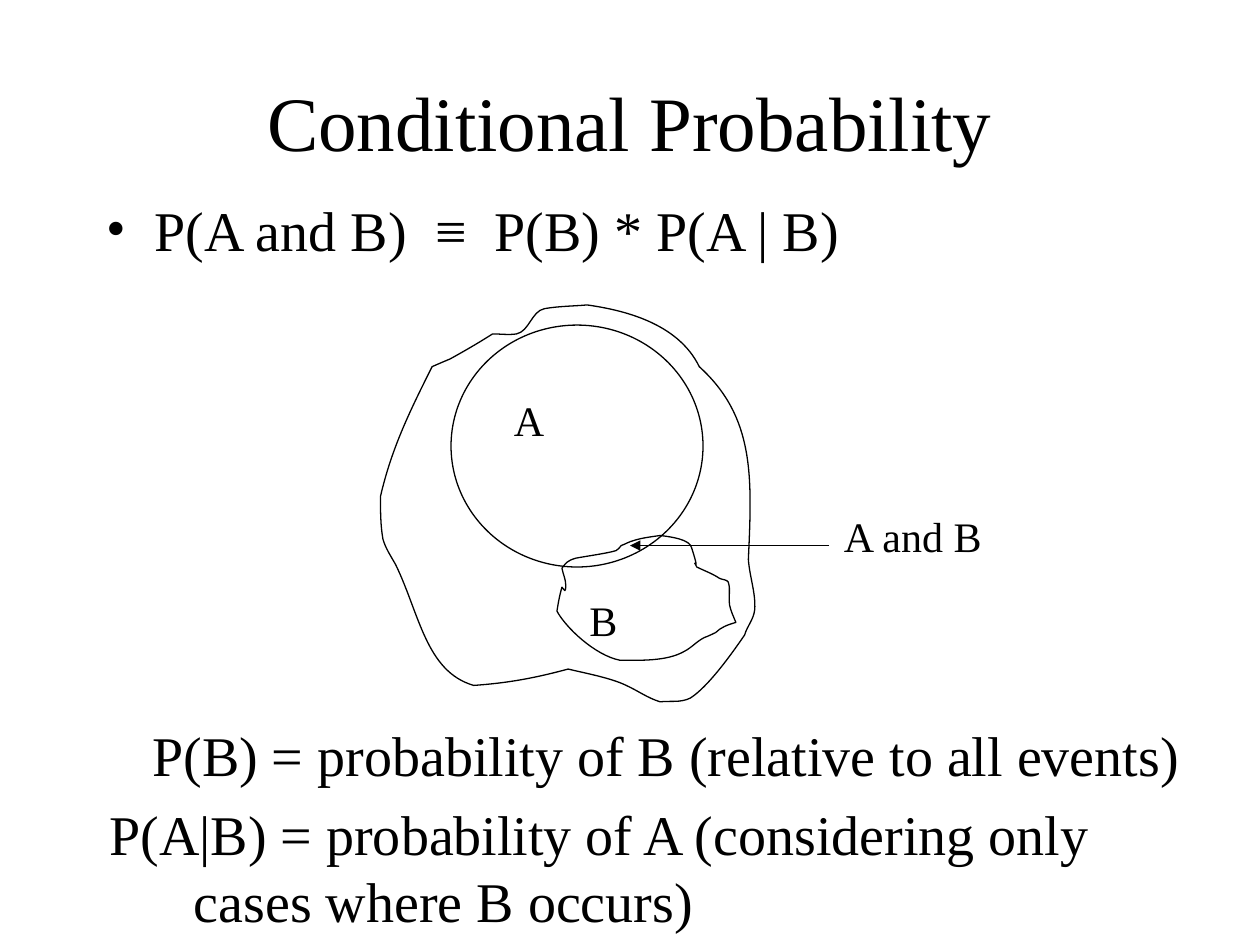
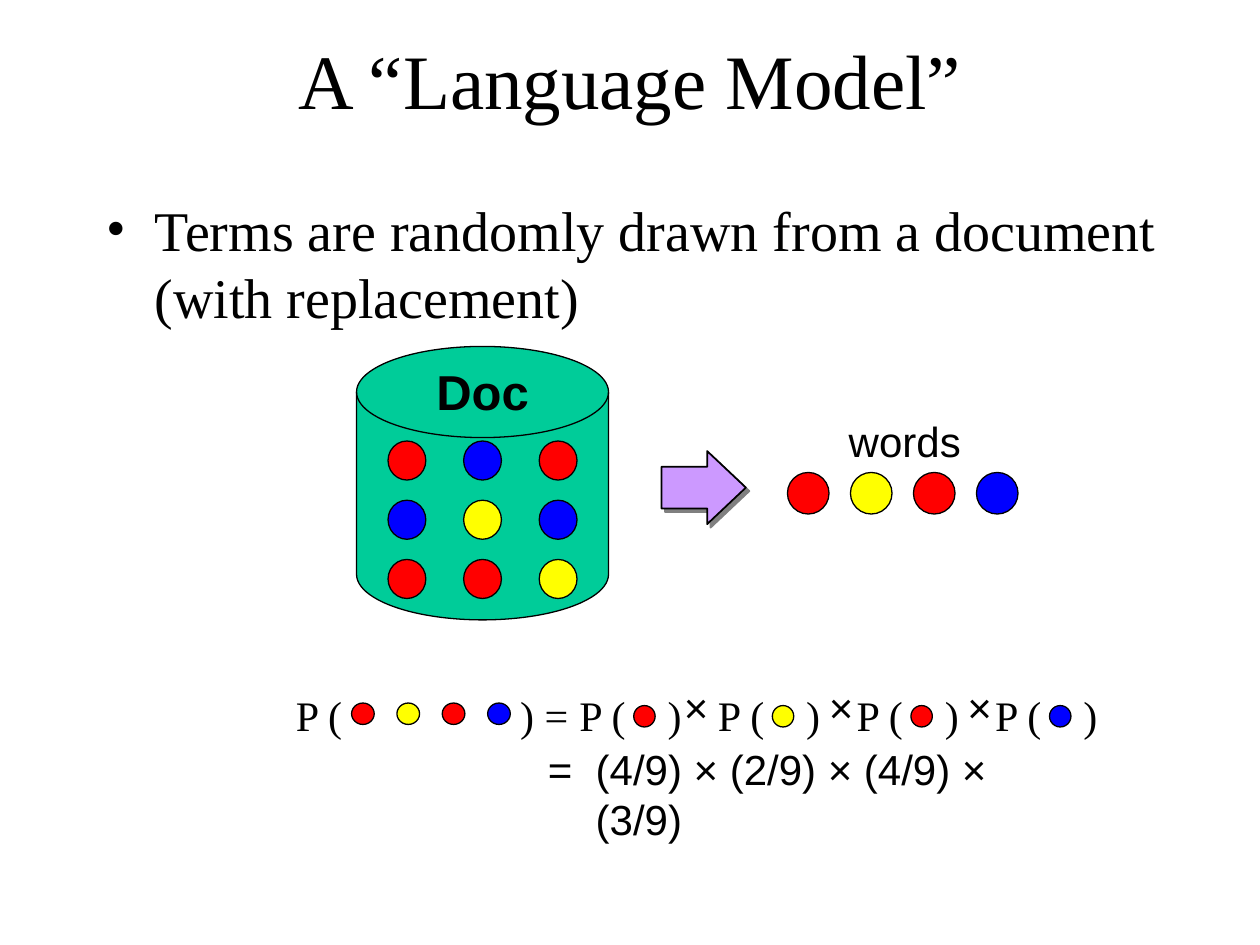
import dataclasses

import lxml.etree
import pptx
import pptx.dml.color
import pptx.enum.shapes
import pptx.enum.text
import pptx.oxml.ns
import pptx.util

EMU_PER_PX = 9144  # 100 px to the inch
SHAPES = pptx.enum.shapes.MSO_SHAPE
CENTER = pptx.enum.text.PP_ALIGN.CENTER


@dataclasses.dataclass(frozen=True)
class Theme:
    serif: str = "Times New Roman"
    sans: str = "Arial"
    ink: str = "000000"
    red: str = "FF0000"
    yellow: str = "FFFF00"
    blue: str = "0000FF"
    green: str = "00CC99"
    violet: str = "CC99FF"
    shadow: str = "808080"
    title_size: int = 44
    body_size: int = 32
    heading_size: int = 28
    label_size: int = 24
    line_width: float = 0.75
    hanging: int = 38


THEME = Theme()

# Each outline is a start point followed by three points for every Bézier curve.
EVENT_SPACE = (
    (391, 265), (380, 272), (368, 279), (357, 285), (352, 287), (343, 291), (343, 291),
    (326, 325), (311, 355), (302, 394), (302, 406), (302, 417), (304, 428),
    (306, 435), (310, 441), (314, 448), (333, 487), (338, 533), (376, 544),
    (404, 542), (425, 538), (451, 531), (463, 534), (485, 538), (497, 544),
    (506, 548), (514, 554), (524, 557), (532, 556), (540, 558), (548, 554),
    (562, 545), (580, 520), (591, 504), (593, 497), (598, 492), (599, 484),
    (600, 471), (595, 458), (594, 444), (597, 378), (599, 331), (555, 291),
    (538, 256), (494, 246), (466, 242), (455, 243), (443, 243), (432, 245),
    (422, 247), (420, 263), (410, 265), (404, 266), (397, 265), (391, 265),
)
EVENT_B = (
    (446, 466), (444, 473), (443, 479), (442, 485), (449, 498), (472, 520), (492, 524),
    (508, 524), (529, 525), (543, 517), (549, 514), (553, 509), (559, 506),
    (562, 505), (568, 502), (568, 502), (572, 498), (577, 496), (584, 494),
    (582, 489), (580, 485), (579, 480), (578, 474), (580, 468), (578, 462),
    (577, 460), (573, 460), (571, 459), (565, 455), (559, 453), (553, 450),
    (548, 440), (557, 460), (549, 435), (548, 428), (532, 426), (524, 425),
    (517, 426), (509, 427), (503, 429), (499, 430), (496, 432), (493, 433),
    (492, 435), (490, 436), (489, 437), (483, 439), (462, 442), (457, 443),
    (450, 445), (449, 447), (446, 451), (447, 456), (449, 460), (449, 464),
    (449, 472), (448, 468), (446, 466),
)


def emu(*lengths):
    return [pptx.util.Emu(length * EMU_PER_PX) for length in lengths]


def rgb(color):
    return pptx.dml.color.RGBColor.from_string(color)


def add_xml(parent, tag, **attributes):
    return lxml.etree.SubElement(parent, pptx.oxml.ns.qn(tag), attributes)


class Deck:
    def __init__(self, theme):
        self.theme = theme
        self.presentation = pptx.Presentation()
        self.presentation.slide_width, self.presentation.slide_height = emu(1000, 750)
        self.slide = None

    def new_slide(self, title, top):
        self.slide = self.presentation.slides.add_slide(self.presentation.slide_layouts[5])
        placeholder = self.slide.shapes.title
        (placeholder.left, placeholder.top,
         placeholder.width, placeholder.height) = emu(75, top, 850, 125)
        frame = placeholder.text_frame
        frame.text = title
        frame.vertical_anchor = pptx.enum.text.MSO_ANCHOR.MIDDLE
        paragraph = frame.paragraphs[0]
        paragraph.alignment = CENTER
        self.style_font(paragraph.font, self.theme.title_size, self.theme.serif)

    def style_font(self, font, size, name, bold=False):
        font.size, font.name, font.bold = pptx.util.Pt(size), name, bold
        font.color.rgb = rgb(self.theme.ink)

    def style_line(self, line, width=None):
        line.color.rgb = rgb(self.theme.ink)
        line.width = pptx.util.Pt(width or self.theme.line_width)

    def text_frame(self, *box):
        frame = self.slide.shapes.add_textbox(*emu(*box)).text_frame
        frame.word_wrap = True
        return frame

    def paragraph(self, paragraph, content, size=None, font=None, bold=False, align=None,
                  margin=0, indent=0, bullet=None, spaced=True):
        """Fill a paragraph; margin and indent are in px."""
        size = size or self.theme.label_size
        font = font or self.theme.serif
        paragraph.text = content
        paragraph.alignment = align
        if spaced:
            paragraph.space_before = pptx.util.Pt(size * 0.2)
        properties = paragraph._p.get_or_add_pPr()
        properties.set("marL", str(margin * EMU_PER_PX))
        properties.set("indent", str(indent * EMU_PER_PX))
        if bullet:
            add_xml(properties, "a:buFont", typeface=font)
            add_xml(properties, "a:buChar", char=bullet)
        self.style_font(paragraph.font, size, font, bold)

    def text(self, box, content, **style):
        paragraph = self.text_frame(*box).paragraphs[0]
        self.paragraph(paragraph, content, **style)
        return paragraph

    def hanging_text(self, box, content, hanging, **style):
        """Add text whose tab, and whose further lines, start at the hanging indent."""
        return self.text(box, content, margin=hanging, indent=-hanging, **style)

    def bullet(self, box, content):
        return self.hanging_text(box, content, self.theme.hanging,
                                 size=self.theme.body_size, bullet="•")

    def tracked_run(self, paragraph, content, points=0):
        """Add a run with extra space, in points, after each character."""
        run = paragraph.add_run()
        run.text = content
        if points:
            run.font._element.set("spc", str(points * 100))

    def shape(self, kind, box, fill=None, line_width=None):
        shape = self.slide.shapes.add_shape(kind, *emu(*box))
        self.finish(shape, fill, line_width)
        return shape

    def finish(self, shape, fill=None, line_width=None):
        shape.shadow.inherit = False
        if fill:
            shape.fill.solid()
            shape.fill.fore_color.rgb = rgb(fill)
        else:
            shape.fill.background()
        self.style_line(shape.line, line_width)

    def dot(self, left, top, width, height, fill):
        self.shape(SHAPES.OVAL, (left, top, width, height), fill)

    def outline(self, points):
        """Build a closed freeform, then turn its straight segments into curves."""
        builder = self.slide.shapes.build_freeform(*points[0], scale=EMU_PER_PX)
        builder.add_line_segments(points[3::3], close=True)
        shape = builder.convert_to_shape()
        left, top = min(x for x, _ in points[::3]), min(y for _, y in points[::3])
        segments = list(shape._element.iter(pptx.oxml.ns.qn("a:lnTo")))
        for index, segment in enumerate(segments):
            curve = lxml.etree.Element(pptx.oxml.ns.qn("a:cubicBezTo"))
            for x, y in points[3 * index + 1:3 * index + 4]:
                add_xml(curve, "a:pt", x=str(x - left), y=str(y - top))
            segment.getparent().replace(segment, curve)
        self.finish(shape)

    def arrow(self, *ends):
        connector = self.slide.shapes.add_connector(
            pptx.enum.shapes.MSO_CONNECTOR.STRAIGHT, *emu(*ends))
        self.style_line(connector.line)
        add_xml(connector.line._get_or_add_ln(), "a:tailEnd", type="triangle")
        add_xml(connector._element.spPr, "a:effectLst")

    def drop_shadow(self, shape):
        effects = shape._element.spPr.find(pptx.oxml.ns.qn("a:effectLst"))
        shadow = add_xml(effects, "a:outerShdw", dist=str(pptx.util.Pt(2.8)),
                         dir="2700000", algn="ctr", rotWithShape="0")
        add_xml(shadow, "a:srgbClr", val=self.theme.shadow)


def conditional_probability(deck):
    theme = deck.theme
    deck.new_slide("Conditional Probability", 33)
    formula = deck.bullet((75, 150, 850, 100), "P(A and B)")
    deck.tracked_run(formula, " ", 8)
    deck.tracked_run(formula, "≡ ", 4)
    deck.tracked_run(formula, "P(B) * P(A | B)")

    deck.outline(EVENT_SPACE)
    deck.shape(SHAPES.OVAL, (358, 258, 200, 192))
    deck.outline(EVENT_B)
    for left, top, width, label in (
        (398, 308, 46, "A"), (458, 467, 46, "B"), (660, 400, 150, "A and B"),
    ):
        deck.text((left, top, width, 50), label, spaced=False)
    deck.arrow(658, 433, 500, 433)

    frame = deck.text_frame(77, 567, 923, 182)
    deck.paragraph(frame.paragraphs[0], "P(B) = probability of B (relative to all events)",
                   size=theme.body_size, margin=34)
    deck.paragraph(frame.add_paragraph(),
                   "P(A|B) = probability of A (considering only\vcases where B occurs)",
                   size=theme.body_size, margin=67, indent=-67)


def language_model(deck):
    theme = deck.theme
    red, yellow, blue = theme.red, theme.yellow, theme.blue
    drawn_words = (red, yellow, red, blue)
    document_rows = ((red, blue, red), (blue, yellow, blue), (red, red, yellow))

    deck.new_slide("A “Language Model”", 0)
    deck.bullet((75, 150, 867, 450),
                "Terms are randomly drawn from a document (with replacement)")

    deck.shape(SHAPES.FLOWCHART_MAGNETIC_DISK, (283, 275, 200, 217), theme.green)
    deck.text((332, 282, 102, 57), "Doc", size=theme.heading_size, font=theme.sans,
              bold=True, align=CENTER)
    for row, colors in enumerate(document_rows):
        for column, color in enumerate(colors):
            deck.dot(308 + 60 * column, 350 + 47 * row, 30, 31, color)

    draw_arrow = deck.shape(SHAPES.RIGHT_ARROW, (525, 358, 67, 58), theme.violet, 1)
    draw_arrow.adjustments[0], draw_arrow.adjustments[1] = 0.57, 0.53
    deck.drop_shadow(draw_arrow)

    deck.text((642, 325, 152, 50), "words", font=theme.sans, align=CENTER)
    deck.hanging_text((225, 542, 242, 58), "P (\t) =", 178)
    for index, color in enumerate(drawn_words):
        deck.dot(625 + 50 * index, 375, 33, 33, color)
        deck.dot(279 + 36 * index, 558, 18, 17, color)
        deck.hanging_text((450 + 110 * index, 542, 117, 42), "P (\t)", 70)
        deck.dot(503 + 110 * index, 560, 17, 17, color)
    for left in (533, 648, 758):
        deck.text((left, 536, 38, 50), "×", font=theme.sans)
    deck.hanging_text((425, 585, 400, 92), "=\t(4/9) × (2/9) × (4/9) × (3/9)",
                      theme.hanging, font=theme.sans)


def main():
    deck = Deck(THEME)
    conditional_probability(deck)
    language_model(deck)
    deck.presentation.save("out.pptx")


if __name__ == "__main__":
    main()
